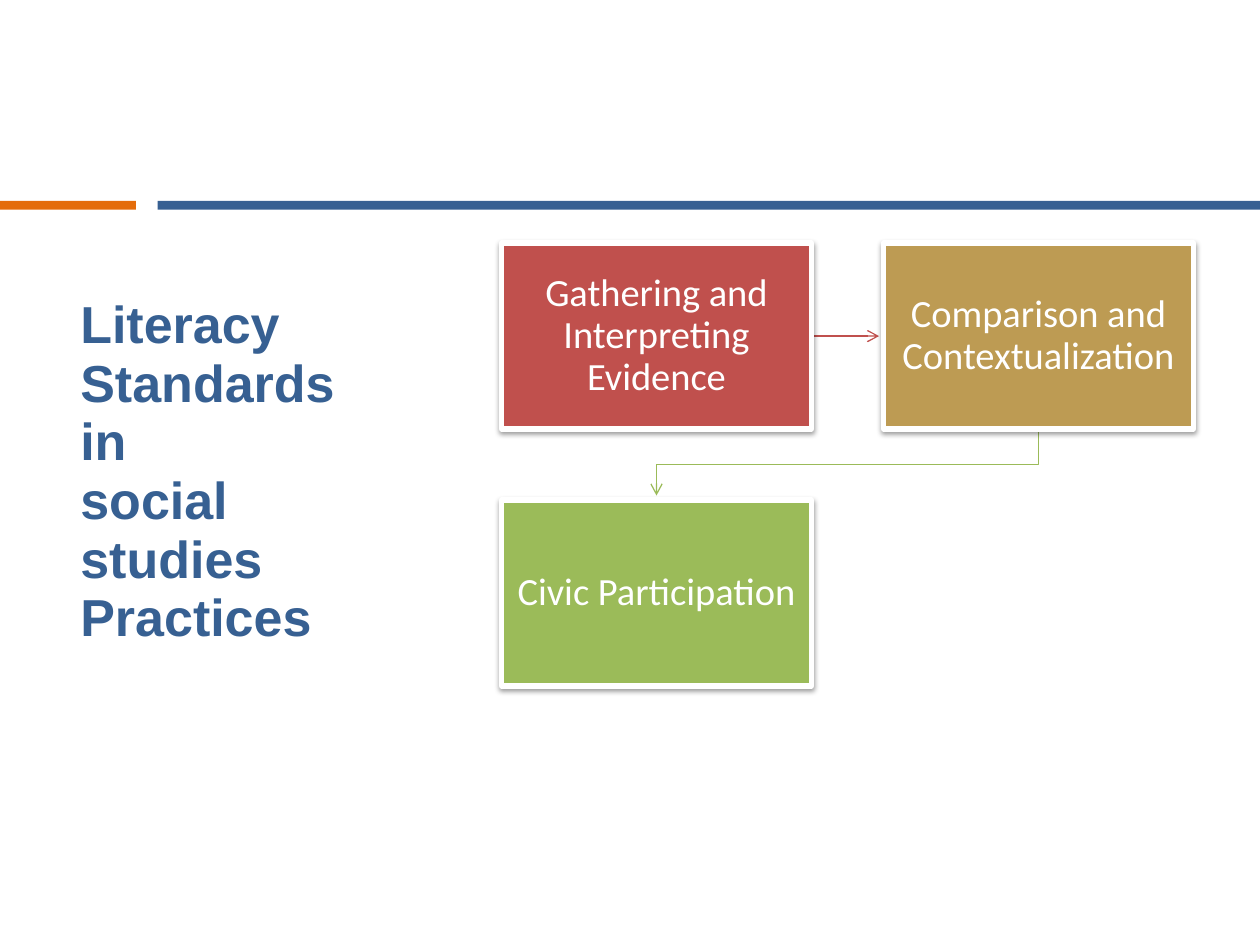
import pptx
import pptx.dml.color
import pptx.enum.shapes
import pptx.enum.text
import pptx.oxml
import pptx.oxml.ns
import pptx.util
from pptx.util import Cm, Pt

RGBColor = pptx.dml.color.RGBColor
BLUE = RGBColor(0x37, 0x60, 0x92)
ORANGE = RGBColor(0xE4, 0x6C, 0x0A)
RED = RGBColor(0xC0, 0x50, 0x4D)
GOLD = RGBColor(0xBD, 0x9B, 0x53)
GREEN = RGBColor(0x9B, 0xBB, 0x59)
WHITE = RGBColor(0xFF, 0xFF, 0xFF)
RECTANGLE = pptx.enum.shapes.MSO_SHAPE.RECTANGLE
MIDDLE = pptx.enum.text.MSO_ANCHOR.MIDDLE
NAMESPACE = pptx.oxml.ns.nsdecls("a")
SHADOW = (
    f'<a:effectLst {NAMESPACE}><a:outerShdw blurRad="{Pt(3.1)}" dist="{Pt(1.6)}" '
    'dir="5400000" rotWithShape="0"><a:srgbClr val="000000"><a:alpha val="38000"/>'
    '</a:srgbClr></a:outerShdw></a:effectLst>'
)


def style_arrow(arrow, color):
    arrow.line.color.rgb = color
    arrow.line.width = Pt(0.75)
    line = arrow.line._get_or_add_ln()
    line.append(pptx.oxml.parse_xml(f'<a:tailEnd {NAMESPACE} type="arrow"/>'))


def format_text(para, font_name, size, color, bold=False):
    para.line_spacing = 0.9
    for span in para.runs:
        span.font.name = font_name
        span.font.size = Pt(size)
        span.font.bold = bold
        span.font.color.rgb = color


deck = pptx.Presentation()
deck.slide_width = Cm(25.4)
deck.slide_height = Cm(19.05)
page = deck.slides.add_slide(deck.slide_layouts[6])

# Divider bars
for left, width, color in ((3.18, 22.22, BLUE), (0, 2.74, ORANGE)):
    bar = page.shapes.add_shape(RECTANGLE, Cm(left), Cm(4.05), Cm(width), Cm(0.18))
    bar.shadow.inherit = False
    bar.fill.solid()
    bar.fill.fore_color.rgb = color
    bar.line.fill.background()

# Title
title = page.shapes.add_textbox(Cm(1.37), Cm(5.26), Cm(7.38), Cm(8.53))
title.text_frame.word_wrap = True
title.text_frame.vertical_anchor = MIDDLE
title_para = title.text_frame.paragraphs[0]
title_para.text = "Literacy Standards\vin\vsocial studies Practices"
format_text(title_para, "Arial", 29.7, BLUE, bold=True)
title_para.line_spacing = 0.94

# Grid of practice boxes
box_width, box_height = Cm(6.25), Cm(3.75)
columns = (Cm(10.11), Cm(17.81))
rows = (Cm(4.9), Cm(10.08))
practices = (
    ("Gathering and Interpreting Evidence", 0, 0, RED),
    ("Comparison and Contextualization", 1, 0, GOLD),
    ("Civic Participation", 0, 1, GREEN),
)
tip_gap = Cm(0.09)

# Arrow from the first box to the second
middle = rows[0] + box_height // 2
across = page.shapes.add_connector(
    pptx.enum.shapes.MSO_CONNECTOR.STRAIGHT,
    columns[0] + box_width, middle, columns[1] - tip_gap, middle)
style_arrow(across, RED)
across._element.spPr.append(pptx.oxml.parse_xml(f"<a:effectLst {NAMESPACE}/>"))

# Bent arrow from the second box to the third
start_x, end_x = (column + box_width // 2 for column in reversed(columns))
start_y, end_y = rows[0] + box_height, rows[1] - tip_gap
bend_y = (rows[0] + box_height + rows[1]) // 2
outline = page.shapes.build_freeform(start_x, start_y)
outline.add_line_segments(
    [(start_x, bend_y), (end_x, bend_y), (end_x, end_y)], close=False)
down = outline.convert_to_shape()
down.shadow.inherit = False
down.fill.background()
style_arrow(down, GREEN)

# Practice boxes
for text, column, row, color in practices:
    box = page.shapes.add_shape(
        RECTANGLE, columns[column], rows[row], box_width, box_height)
    box.fill.solid()
    box.fill.fore_color.rgb = color
    box.line.color.rgb = WHITE
    box.line.width = Pt(3)
    box._element.spPr.append(pptx.oxml.parse_xml(SHADOW))
    frame = box.text_frame
    frame.word_wrap = True
    frame.vertical_anchor = MIDDLE
    frame.margin_left = frame.margin_right = Cm(0.3)
    frame.margin_top = frame.margin_bottom = Cm(0.33)
    frame.text = text
    frame.paragraphs[0].alignment = pptx.enum.text.PP_ALIGN.CENTER
    format_text(frame.paragraphs[0], "Calibri", 22, WHITE)

deck.save("out.pptx")
